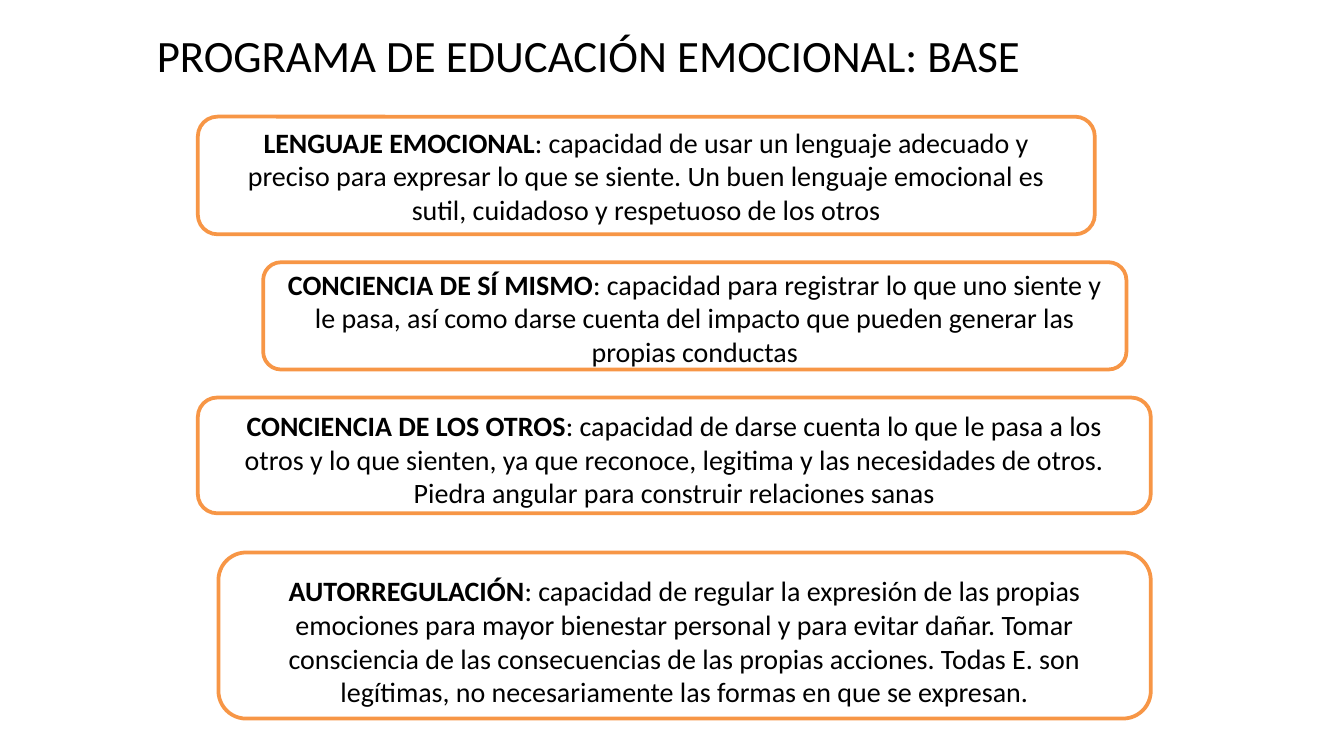
from dataclasses import dataclass

import pptx
import pptx.dml.color
import pptx.enum.shapes
import pptx.enum.text
import pptx.util

Pt = pptx.util.Pt
BLACK = pptx.dml.color.RGBColor(0x00, 0x00, 0x00)
ORANGE = pptx.dml.color.RGBColor(0xF7, 0x96, 0x46)
FONT = "Calibri"


@dataclass
class Skill:
    """A framed definition; lengths are in points."""
    term: str
    meaning: str
    left: float
    top: float
    width: float
    height: float
    side_inset: float
    top_inset: float


SKILLS = [
    Skill("LENGUAJE EMOCIONAL",
          "capacidad de usar un lenguaje adecuado y preciso para expresar lo que "
          "se siente. Un buen lenguaje emocional es sutil, cuidadoso y respetuoso "
          "de los otros",
          106, 62.5, 480.5, 63, 10, 0),
    Skill("CONCIENCIA DE SÍ MISMO",
          "capacidad para registrar lo que uno siente y le pasa, así como darse "
          "cuenta del impacto que pueden generar las propias conductas",
          141, 140.5, 462.5, 57.5, 10, 2),
    Skill("CONCIENCIA DE LOS OTROS",
          "capacidad de darse cuenta lo que le pasa a los otros y lo que sienten, "
          "ya que reconoce, legitima y las necesidades de otros. Piedra angular "
          "para construir relaciones sanas",
          106, 213, 510.5, 62, 20, 4),
    Skill("AUTORREGULACIÓN",
          "capacidad de regular la expresión de las propias emociones para mayor "
          "bienestar personal y para evitar dañar. Tomar consciencia de las "
          "consecuencias de las propias acciones. Todas E. son legítimas, no "
          "necesariamente las formas en que se expresan.",
          117, 296, 499.5, 89, 20, 6),
]


def set_insets(frame: pptx.text.text.TextFrame, side: float, top: float) -> None:
    frame.margin_left = frame.margin_right = Pt(side)
    frame.margin_top, frame.margin_bottom = Pt(top), Pt(0)
    frame.vertical_anchor = pptx.enum.text.MSO_ANCHOR.MIDDLE
    frame.auto_size = pptx.enum.text.MSO_AUTO_SIZE.NONE
    frame.word_wrap = True


def set_font(para: pptx.text.text._Paragraph, size: float) -> None:
    para.font.name = FONT
    para.font.size = Pt(size)
    para.font.color.rgb = BLACK


def write_title(page: pptx.slide.Slide, text: str) -> None:
    title = page.shapes.title
    title.left, title.top, title.width, title.height = Pt(83), Pt(13), Pt(510), Pt(30)
    title.text = text
    set_insets(title.text_frame, 1, 2)
    para = title.text_frame.paragraphs[0]
    para.alignment = pptx.enum.text.PP_ALIGN.LEFT
    set_font(para, 24)


def draw_skill(page: pptx.slide.Slide, skill: Skill) -> None:
    box = page.shapes.add_shape(
        pptx.enum.shapes.MSO_SHAPE.ROUNDED_RECTANGLE,
        Pt(skill.left), Pt(skill.top), Pt(skill.width), Pt(skill.height))
    box.shadow.inherit = False
    box.fill.background()
    box.line.color.rgb = ORANGE
    box.line.width = Pt(2)
    set_insets(box.text_frame, skill.side_inset, skill.top_inset)
    para = box.text_frame.paragraphs[0]
    para.alignment = pptx.enum.text.PP_ALIGN.CENTER
    para.line_spacing = Pt(18)
    set_font(para, 15)
    for text, bold in ((skill.term, True), (f": {skill.meaning}", False)):
        span = para.add_run()
        span.text = text
        span.font.bold = bold


def main() -> None:
    deck = pptx.Presentation()
    deck.slide_width, deck.slide_height = Pt(720), Pt(405)
    page = deck.slides.add_slide(deck.slide_layouts.get_by_name("Title Only"))
    write_title(page, "PROGRAMA DE EDUCACIÓN EMOCIONAL: BASE")
    for skill in SKILLS:
        draw_skill(page, skill)
    deck.save("out.pptx")


if __name__ == "__main__":
    main()
